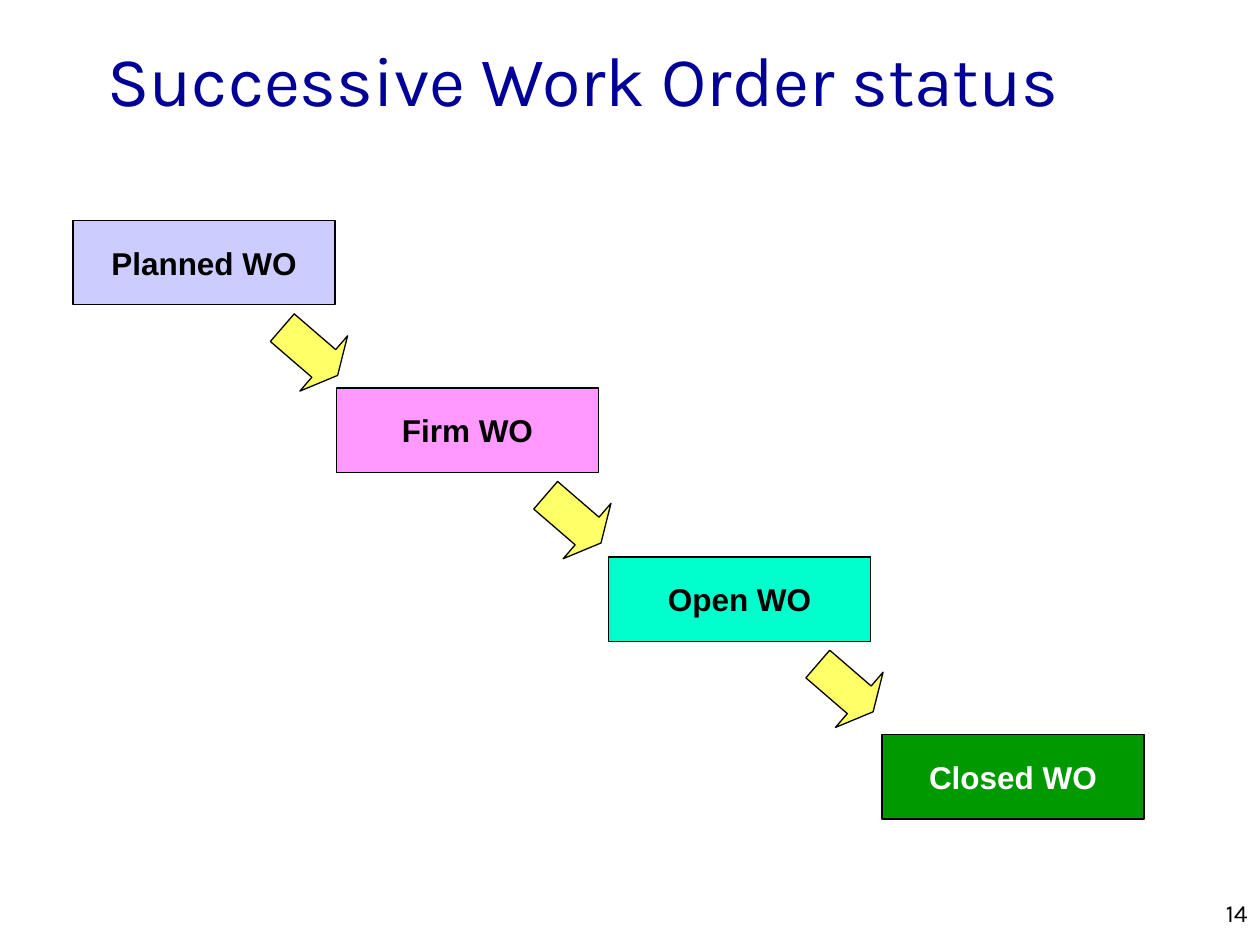
from dataclasses import dataclass

from pptx import Presentation
from pptx.dml.color import RGBColor
from pptx.enum.shapes import MSO_SHAPE
from pptx.enum.text import MSO_ANCHOR, PP_ALIGN
from pptx.util import Inches, Pt

RECT, ARROW = MSO_SHAPE.RECTANGLE, MSO_SHAPE.RIGHT_ARROW
TOP, MIDDLE = MSO_ANCHOR.TOP, MSO_ANCHOR.MIDDLE
CENTER, RIGHT = PP_ALIGN.CENTER, PP_ALIGN.RIGHT
BLACK = "000000"
BOX_W, BOX_H = 2.08, 0.67
ARROW_SIZE = 0.58


@dataclass
class Step:
    label: str
    left: float
    top: float
    fill: str
    ink: str = BLACK


STEPS = [
    Step("Planned WO", 0.58, 1.75, "CCCCFF"),
    Step("Firm WO", 2.67, 3.08, "FF99FF"),
    Step("Open WO", 4.83, 4.42, "00FFCC"),
    Step("Closed WO", 7, 5.83, "009900", "FFFFFF"),
]


def color(code: str) -> RGBColor:
    return RGBColor.from_string(code)


def write(shape, text: str, *, size: float, font: str = "Karla",
          ink: str = BLACK, bold: bool = False, align=RIGHT,
          anchor=MIDDLE, wrap: bool = True) -> None:
    frame = shape.text_frame
    frame.word_wrap = wrap
    frame.vertical_anchor = anchor
    para = frame.paragraphs[0]
    para.alignment = align
    run = para.add_run()
    run.text = text
    run.font.size = Pt(size)
    run.font.name = font
    run.font.bold = bold
    run.font.color.rgb = color(ink)


def add_block(slide, kind, left: float, top: float, width: float,
              height: float, fill: str):
    shape = slide.shapes.add_shape(
        kind, Inches(left), Inches(top), Inches(width), Inches(height))
    shape.shadow.inherit = False
    shape.fill.solid()
    shape.fill.fore_color.rgb = color(fill)
    shape.line.color.rgb = color(BLACK)
    shape.line.width = Pt(0.75)
    return shape


def add_step(slide, step: Step) -> None:
    box = add_block(slide, RECT, step.left, step.top, BOX_W, BOX_H, step.fill)
    write(box, step.label, size=18, font="Arial", ink=step.ink, bold=True,
          align=CENTER, wrap=False)


def add_arrow(slide, step: Step) -> None:
    arrow = add_block(slide, ARROW, step.left + 1.59, step.top + 0.75,
                      ARROW_SIZE, ARROW_SIZE, "FFFF66")
    arrow.adjustments[0] = 0.5
    arrow.adjustments[1] = 0.25
    arrow.rotation = 40.8


def main() -> None:
    deck = Presentation()
    deck.slide_width, deck.slide_height = Inches(10), Inches(7.5)
    slide = deck.slides.add_slide(deck.slide_layouts[5])

    # Title
    title = slide.shapes.title
    title.left, title.top = Inches(0), Inches(0)
    title.width, title.height = Inches(8.5), Inches(1.25)
    write(title, "Successive Work Order status", size=40, ink="000099")

    # Staircase of statuses, with an arrow from each to the next
    for step in STEPS:
        add_step(slide, step)
    for step in STEPS[:-1]:
        add_arrow(slide, step)

    # Page number
    page = slide.shapes.add_textbox(
        Inches(7.92), Inches(7.08), Inches(2.08), Inches(0.25))
    write(page, "14", size=14, anchor=TOP)

    deck.save("out.pptx")


if __name__ == "__main__":
    main()
